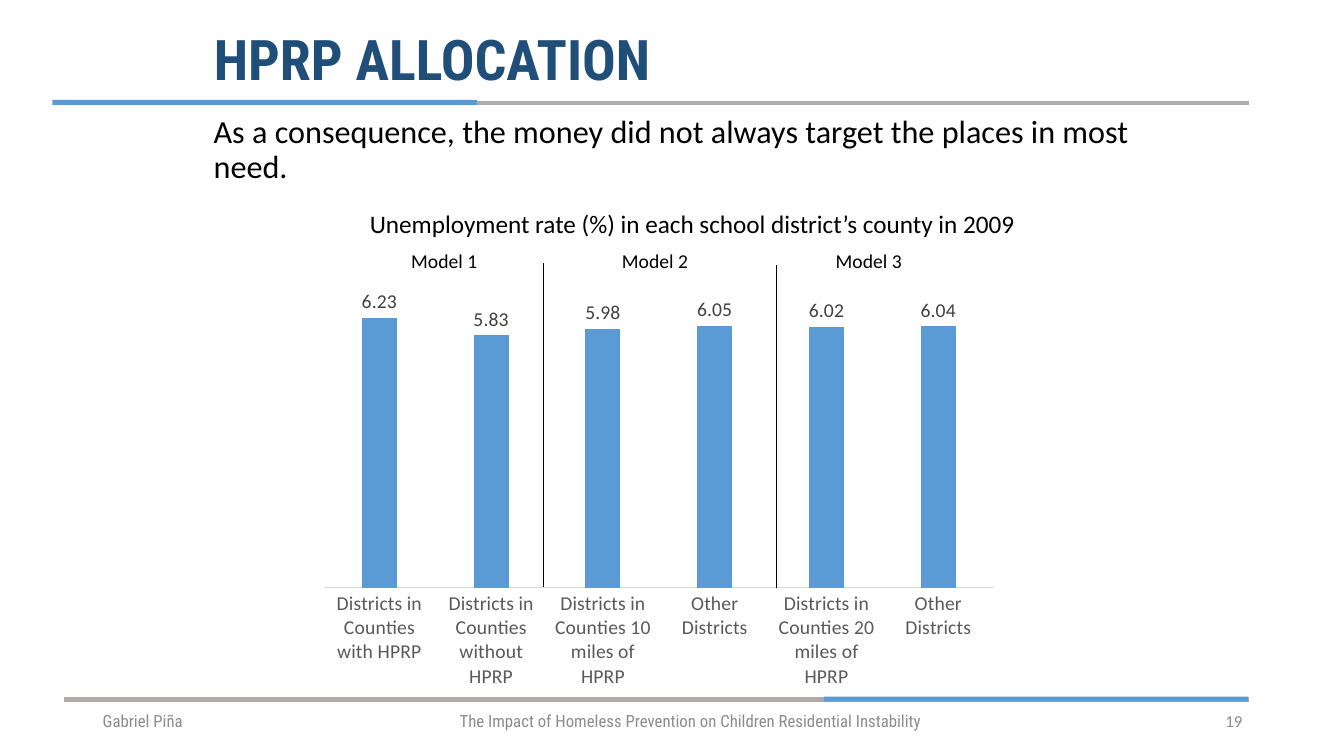
from dataclasses import dataclass

import lxml.etree
import pptx
import pptx.chart.data
import pptx.dml.color
import pptx.enum.chart
import pptx.enum.shapes
import pptx.enum.text
import pptx.oxml
import pptx.oxml.ns
import pptx.util
from pptx.util import Inches


@dataclass(frozen=True)
class Theme:
    """Colours, fonts and type sizes of the slide."""
    navy: str = "1F4E79"
    blue: str = "5B9BD5"
    grey: str = "AFABAB"
    black: str = "000000"
    footer: str = "8C8C8C"
    category: str = "595959"
    value: str = "404040"
    axis: str = "D9D9D9"
    heading_font: str = "Roboto Condensed"
    body_font: str = "Calibri"
    title_size: int = 40
    body_size: int = 23
    caption_size: int = 18
    chart_size: int = 14
    footer_size: int = 12


THEME = Theme()
ALIGN = pptx.enum.text.PP_ALIGN
ANCHOR = pptx.enum.text.MSO_ANCHOR
SHAPE = pptx.enum.shapes.MSO_SHAPE


def rgb(colour):
    """Turn a hex string into a colour."""
    return pptx.dml.color.RGBColor.from_string(colour)


def set_font(font, name, size, colour, bold=False):
    """Set the look of a font."""
    font.name = name
    font.size = pptx.util.Pt(size)
    font.color.rgb = rgb(colour)
    font.bold = bold


def write(box, text, name, size, colour, bold=False, align=ALIGN.LEFT,
          anchor=ANCHOR.TOP, wrap=True):
    """Write one paragraph into a box and return it."""
    frame = box.text_frame
    frame.text = text
    frame.word_wrap = wrap
    frame.vertical_anchor = anchor
    frame.auto_size = pptx.enum.text.MSO_AUTO_SIZE.NONE
    para = frame.paragraphs[0]
    para.alignment = align
    set_font(para.runs[0].font, name, size, colour, bold)
    return para


def add_title(page, text):
    """Place and fill the title placeholder."""
    title = page.shapes.title
    title.left, title.top = Inches(2.02), Inches(0.24)
    title.width, title.height = Inches(9.31), Inches(0.76)
    para = write(title, text, THEME.heading_font, THEME.title_size,
                 THEME.navy, bold=True, anchor=ANCHOR.MIDDLE)
    para.line_spacing = 0.9


def add_text(page, place, text, size, colour=THEME.black,
             name=THEME.body_font, **options):
    """Add a text box and return its paragraph."""
    box = page.shapes.add_textbox(*map(Inches, place))
    return write(box, text, name, size, colour, **options)


def add_bar(page, kind, place, colour):
    """Add a plain filled shape."""
    bar = page.shapes.add_shape(kind, *map(Inches, place))
    bar.shadow.inherit = False
    bar.fill.solid()
    bar.fill.fore_color.rgb = rgb(colour)
    bar.line.fill.background()


def add_rule(page, top, accent_left):
    """Add a long grey rule with a blue accent."""
    add_bar(page, SHAPE.MATH_MINUS, (-1.49, top, 16, 0.18), THEME.grey)
    add_bar(page, SHAPE.RECTANGLE, (accent_left, top + 0.06, 4.21, 0.05),
            THEME.blue)


def add_divider(page, left, top, bottom):
    """Add a thin vertical line between two models."""
    line = page.shapes.add_connector(
        pptx.enum.shapes.MSO_CONNECTOR.STRAIGHT,
        Inches(left), Inches(top), Inches(left), Inches(bottom))
    line.line.color.rgb = rgb(THEME.black)
    line.line.width = pptx.util.Pt(0.5)
    lxml.etree.SubElement(line._element.spPr,
                          pptx.oxml.ns.qn("a:effectLst"))


def set_plot_layout(chart, left, top, width, height):
    """Fix the inner plot area as fractions of the chart."""
    plot_area = chart._chartSpace.chart.plotArea
    for old in plot_area.findall(pptx.oxml.ns.qn("c:layout")):
        plot_area.remove(old)
    settings = {"layoutTarget": "inner", "xMode": "edge", "yMode": "edge",
                "x": left, "y": top, "w": width, "h": height}
    items = "".join(f'<c:{key} val="{value}"/>'
                    for key, value in settings.items())
    plot_area.insert(0, pptx.oxml.parse_xml(
        f'<c:layout {pptx.oxml.ns.nsdecls("c")}>'
        f'<c:manualLayout>{items}</c:manualLayout></c:layout>'))


def add_column_chart(page, place, rates):
    """Add the column chart of unemployment rates."""
    data = pptx.chart.data.CategoryChartData(number_format="0.00")
    data.categories = [district for district, rate in rates]
    data.add_series("Series 1", [rate for district, rate in rates])
    chart = page.shapes.add_chart(
        pptx.enum.chart.XL_CHART_TYPE.COLUMN_CLUSTERED,
        *map(Inches, place), data).chart
    set_font(chart.font, THEME.body_font, THEME.chart_size, THEME.black)
    chart.has_legend = False
    chart.has_title = False
    set_plot_layout(chart, 0.02, 0.045, 0.96, 0.696)

    plot = chart.plots[0]
    plot.vary_by_categories = False
    plot.gap_width, plot.overlap = 219, -27
    fill = plot.series[0].format.fill
    fill.solid()
    fill.fore_color.rgb = rgb(THEME.blue)
    plot.has_data_labels = True
    labels = plot.data_labels
    labels.show_value = True
    labels.number_format, labels.number_format_is_linked = "0.00", False
    labels.position = pptx.enum.chart.XL_LABEL_POSITION.OUTSIDE_END
    set_font(labels.font, THEME.body_font, THEME.chart_size, THEME.value)

    values = chart.value_axis
    values.minimum_scale, values.maximum_scale = 0, 7
    values.has_major_gridlines = False
    values.visible = False
    districts = chart.category_axis
    districts.major_tick_mark = pptx.enum.chart.XL_TICK_MARK.NONE
    districts.format.line.color.rgb = rgb(THEME.axis)
    districts.format.line.width = pptx.util.Pt(0.75)
    set_font(districts.tick_labels.font, THEME.body_font,
             THEME.chart_size, THEME.category)


def main():
    """Build the slide and save it."""
    deck = pptx.Presentation()
    deck.slide_width, deck.slide_height = Inches(13.33), Inches(7.5)
    page = deck.slides.add_slide(deck.slide_layouts.get_by_name("Title Only"))

    add_rule(page, 0.93, 0.52)
    add_rule(page, 6.85, 8.17)
    add_title(page, "HPRP ALLOCATION")
    para = add_text(page, (2.02, 1.1, 9.31, 0.9),
                    "As a consequence, the money did not always target "
                    "the places in most need.", THEME.body_size)
    para.line_spacing = 0.9
    para.space_before = pptx.util.Pt(7.5)

    for left, width, text, name, align in (
            (0.92, 3, "Gabriel Piña", THEME.heading_font, ALIGN.LEFT),
            (4.46, 5.19, "The Impact of Homeless Prevention on Children "
             "Residential Instability", THEME.heading_font, ALIGN.LEFT),
            (9.42, 3, "19", THEME.body_font, ALIGN.RIGHT)):
        add_text(page, (left, 6.95, width, 0.4), text, THEME.footer_size,
                 THEME.footer, name, align=align, anchor=ANCHOR.MIDDLE)

    add_column_chart(page, (3.07, 2.63, 6.93, 4.32), (
        ("Districts in Counties with HPRP", 6.23),
        ("Districts in Counties without HPRP", 5.83),
        ("Districts in Counties 10 miles of HPRP", 5.98),
        ("Other Districts", 6.05),
        ("Districts in Counties 20 miles of HPRP", 6.02),
        ("Other Districts", 6.04)))
    add_text(page, (3.57, 2.02, 6.6, 0.4),
             "Unemployment rate (%) in each school district’s county in 2009",
             THEME.caption_size, wrap=False)
    for left, top, bottom in ((5.39, 2.61, 5.82), (7.7, 2.63, 5.83)):
        add_divider(page, left, top, bottom)
    for number, left in enumerate((3.98, 6.07, 8.19), start=1):
        add_text(page, (left, 2.42, 0.86, 0.34), f"Model {number}",
                 THEME.chart_size, wrap=False)
    deck.save("out.pptx")


if __name__ == "__main__":
    main()
